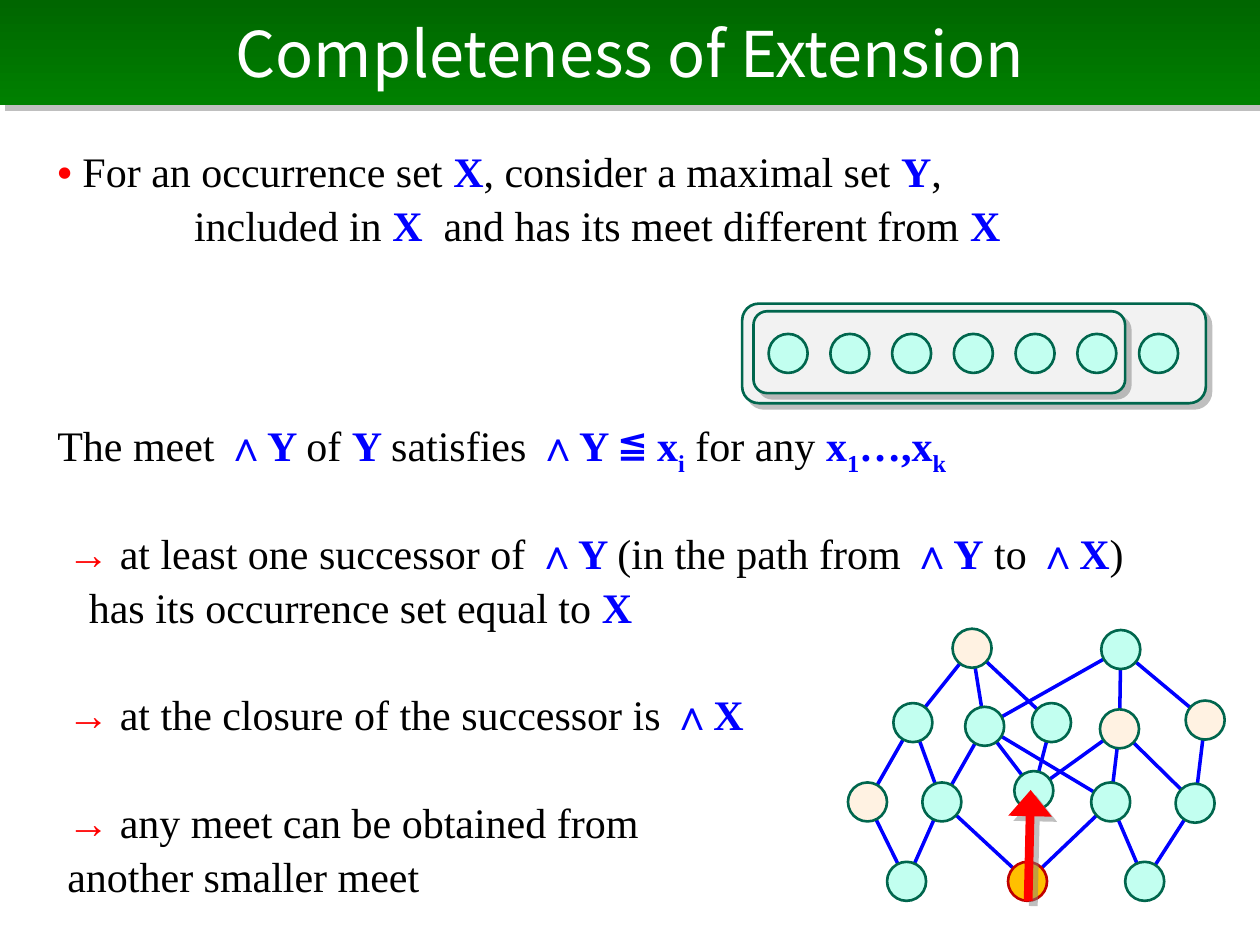
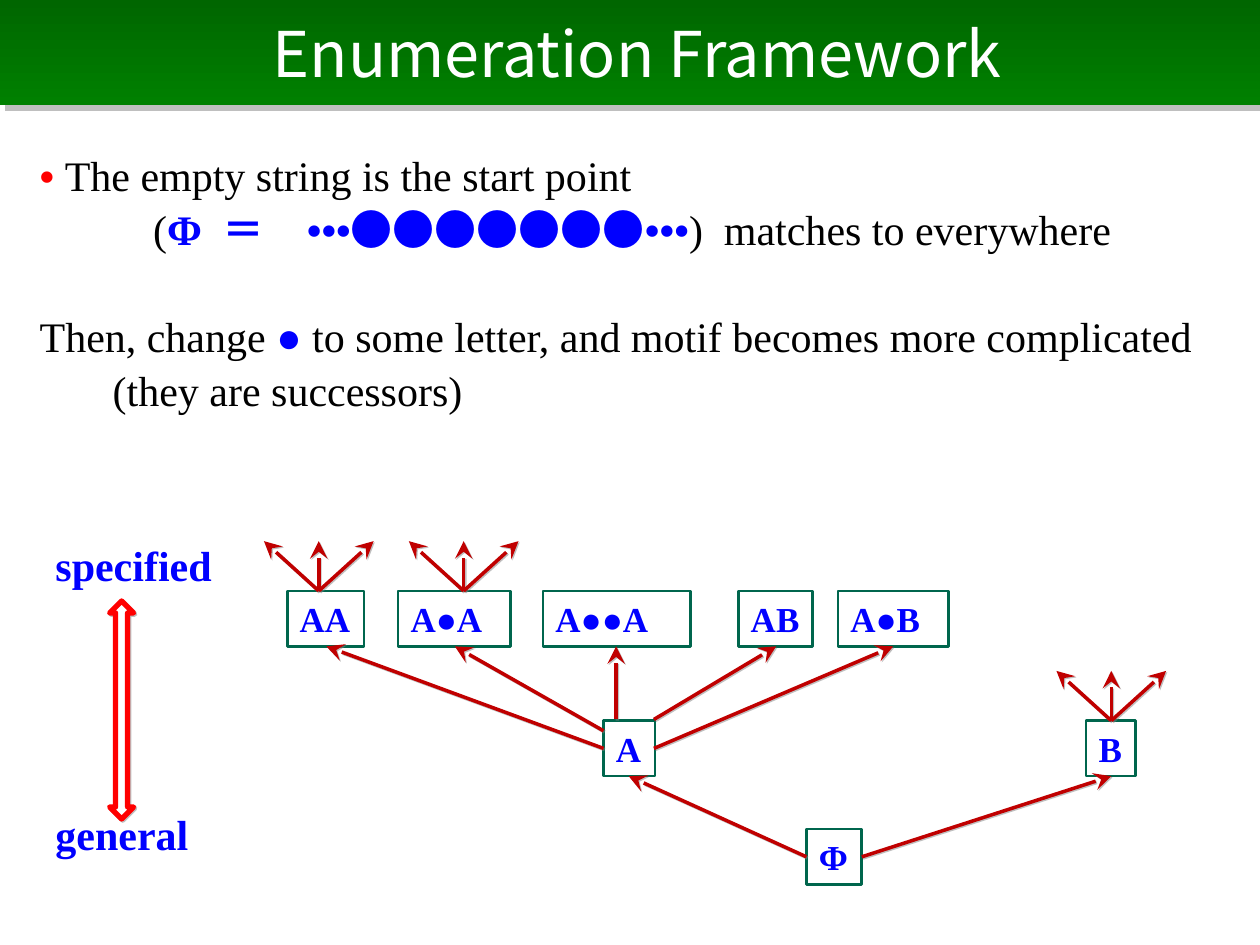
from math import hypot
from lxml.etree import SubElement
from pptx import Presentation
from pptx.dml.color import RGBColor
from pptx.enum.shapes import MSO_CONNECTOR, MSO_SHAPE
from pptx.enum.text import MSO_ANCHOR, PP_ALIGN
from pptx.oxml.ns import qn
from pptx.util import Inches, Pt

COLUMNS, ROWS = 100, 75
GREEN, MINT, PEACH, GREY = "00664D", "C2FFF0", "FFE4C3", "F2F2F2"
WHITE, BLACK, RED, BLUE, CRIMSON = "FFFFFF", "000000", "FF0000", "0000FF", "C00000"
SERIF, SANS = "Times New Roman", "Noto Sans CJK JP"


def color(code):
    return RGBColor.from_string(code)


def plain(text):
    return text, BLACK


def red(text):
    return text, RED, True


def blue(text, asian=SANS):
    return text, BLUE, True, 0, asian


def sub(text):
    return text, BLUE, True, -25000


class Page:
    pitch = 30.85
    dot = 3.1

    def __init__(self, deck, title):
        self.column = deck.slide_width / COLUMNS
        self.row = deck.slide_height / ROWS
        self.slide = deck.slides.add_slide(deck.slide_layouts[6])
        self.header(title)

    def place(self, left, top, width, height):
        return (round(left * self.column), round(top * self.row),
                round(width * self.column), round(height * self.row))

    def shadow(self, element, distance):
        effects = SubElement(element.spPr, qn("a:effectLst"))
        if distance:
            outer = SubElement(effects, qn("a:outerShdw"), dist=str(Pt(distance)),
                               dir="2700000", algn="ctr", rotWithShape="0")
            tone = SubElement(outer, qn("a:srgbClr"), val="808080")
            SubElement(tone, qn("a:alpha"), val="50000")

    def shape(self, kind, area, fill, line=GREEN, weight=1.5, shadow=0, opacity=100):
        box = self.slide.shapes.add_shape(kind, *self.place(*area))
        box.fill.solid()
        box.fill.fore_color.rgb = color(fill)
        if opacity < 100:
            tone = box._element.spPr.find(".//" + qn("a:srgbClr"))
            SubElement(tone, qn("a:alpha"), val=str(opacity * 1000))
        if line:
            box.line.color.rgb = color(line)
            box.line.width = Pt(weight)
        else:
            box.line.fill.background()
        self.shadow(box._element, shadow)
        return box

    def span(self, para, text, tone, bold=False, baseline=0, asian=SANS,
             size=24, font=SERIF):
        span = para.add_run()
        span.text = text
        span.font.size = Pt(size)
        span.font.bold = bold
        span.font.color.rgb = color(tone)
        span.font.name = font
        properties = span._r.get_or_add_rPr()
        SubElement(properties, qn("a:ea"), typeface=asian)
        if baseline:
            properties.set("baseline", str(baseline))

    def header(self, title):
        band = self.shape(MSO_SHAPE.RECTANGLE, (0, 0, COLUMNS, 8.35), "008000",
                          line=None, shadow=4.2)
        band.fill.gradient()
        band.fill.gradient_angle = 270
        for stop, tone in zip(band.fill.gradient_stops, ("006600", "008000")):
            stop.color.rgb = color(tone)
        band.text_frame.vertical_anchor = MSO_ANCHOR.MIDDLE
        para = band.text_frame.paragraphs[0]
        para.alignment = PP_ALIGN.CENTER
        self.span(para, title, WHITE, size=36, font=SANS)

    def text(self, area, lines):
        box = self.slide.shapes.add_textbox(*self.place(*area))
        frame = box.text_frame
        frame.word_wrap = True
        frame.margin_left = frame.margin_right = 0
        frame.margin_top = frame.margin_bottom = 0
        for number, (gap, indent, spans) in enumerate(lines):
            para = frame.add_paragraph() if number else frame.paragraphs[0]
            para.line_spacing = Pt(self.pitch)
            para.space_before = Pt(gap * self.pitch)
            properties = para._p.get_or_add_pPr()
            properties.set("marL", "0")
            properties.set("indent", str(round(indent * self.column)))
            for span in spans:
                self.span(para, *span)

    def line(self, start, end, tone, weight=2, head=None, length="lg", shadow=0):
        connector = self.slide.shapes.add_connector(
            MSO_CONNECTOR.STRAIGHT, *self.place(*start, *end))
        connector.line.color.rgb = color(tone)
        connector.line.width = Pt(weight)
        if head:
            SubElement(connector.line._get_or_add_ln(), qn("a:tailEnd"),
                       type=head, w="lg", len=length)
        self.shadow(connector._element, shadow)

    def circle(self, center, fill=MINT, line=GREEN, opacity=100):
        x, y = center
        area = (x - self.dot / 2, y - self.dot / 2, self.dot, self.dot)
        self.shape(MSO_SHAPE.OVAL, area, fill, line, opacity=opacity)

    def label(self, left, top, width, text):
        box = self.shape(MSO_SHAPE.RECTANGLE, (left, top, width, 4.4), WHITE)
        frame = box.text_frame
        frame.word_wrap = True
        frame.margin_right = 0
        frame.vertical_anchor = MSO_ANCHOR.MIDDLE
        para = frame.paragraphs[0]
        para.alignment = PP_ALIGN.LEFT
        self.span(para, text, BLUE, True, size=20)

    def branch(self, start, end):
        self.line(start, end, CRIMSON, head="stealth", shadow=1)

    def fan(self, x, y):
        for offset in (-4.35, 0, 4.35):
            self.branch((x, y), (x + offset, y - 3.95))


def toward(start, end, distance):
    across, down = end[0] - start[0], end[1] - start[1]
    share = distance / hypot(across, down)
    return start[0] + across * share, start[1] + down * share


def completeness(deck):
    page = Page(deck, "Completeness of Extension")
    for area in ((58.9, 24.1, 36.8, 7.9), (59.8, 24.7, 29.5, 6.5)):
        page.shape(MSO_SHAPE.ROUNDED_RECTANGLE, area, GREY, shadow=4.2)
    for number in range(7):
        page.circle((62.55 + 4.9 * number, 28.05))

    page.text((4.55, 11.3, 92, 62), [
        (0, 0, [red("• "), plain("For an occurrence set "), blue("X"),
                plain(", consider a maximal set "), blue("Y"), plain(",")]),
        (0, 10.85, [plain("included in "), blue("X "),
                    plain(" and has its meet different from "), blue("X")]),
        (3.2, 0, [plain("The meet "), blue("∧Y "), plain("of "), blue("Y "),
                  plain("satisfies "), blue("∧Y ≦ x"), sub("i"), plain(" for any "),
                  blue("x"), sub("1"), blue("…,x"), sub("k")]),
        (0.86, 0.8, [red("→ "), plain("at least one successor of "), blue("∧Y "),
                     plain("(in the path from "), blue("∧Y"), plain(" to "),
                     blue("∧X"), plain(")")]),
        (0, 2.5, [plain("has its occurrence set equal to "), blue("X")]),
        (1, 0.8, [red("→ "), plain("at the closure of the successor is "), blue("∧X")]),
        (1, 0.8, [red("→ "), plain("any meet can be obtained from")]),
        (0, 0.8, [plain("another smaller meet")]),
    ])

    nodes = {
        "a1": (77.15, 51.45), "a2": (88.95, 51.55),
        "b1": (72.45, 57.35), "b2": (78.15, 57.65), "b3": (83.45, 57.35),
        "b4": (88.85, 57.85), "b5": (95.65, 57.15),
        "c1": (68.85, 63.65), "c2": (74.75, 63.65), "c3": (82.05, 62.75),
        "c4": (88.15, 63.65), "c5": (94.85, 63.75),
        "d1": (71.95, 69.95), "d2": (81.55, 69.95), "d3": (90.85, 69.95),
    }
    below = {
        "a1": "b1 b2 b3", "a2": "b2 b4 b5", "b1": "c1 c2", "b2": "c2 c3 c4",
        "b3": "c3", "b4": "c3 c4 c5", "b5": "c5", "c1": "d1", "c2": "d1 d2",
        "c3": "d2", "c4": "d2 d3", "c5": "d3",
    }
    pale = ("a1", "b4", "b5", "c1")
    for upper, names in below.items():
        for lower in names.split():
            ends = [toward(nodes[here], nodes[there], page.dot / 2)
                    if here in pale else nodes[here]
                    for here, there in ((upper, lower), (lower, upper))]
            page.line(*ends, BLUE)
    for name, center in nodes.items():
        if name in pale:
            page.circle(center, PEACH, opacity=47)
        elif name == "d2":
            page.circle(center, "FFC000", CRIMSON)
        else:
            page.circle(center)
    page.line((81.6, 71.5), (81.8, 62.7), RED, 5, "triangle", "med", 4.2)


def enumeration(deck):
    page = Page(deck, " Enumeration Framework")
    dots = blue("•••", SERIF)
    page.text((3.15, 11.55, 96, 22), [
        (0, 0, [red("• "), plain("The empty string is the start point")]),
        (0, 9, [plain("("), blue("Φ "), blue(" ＝　"), dots, blue("●●●●●●●"), dots,
                plain(") "), plain(" matches to everywhere")]),
        (1, 0, [plain("Then, change "), blue("● "),
                plain("to some letter, and motif becomes more complicated")]),
        (0, 5.8, [plain("(they are successors)")]),
    ])

    for label in ((64, 65.8, 4.4, "Φ"), (47.9, 57.2, 4.1, "A"), (86.2, 57.2, 3.9, "B"),
                  (22.8, 46.9, 6.1, "AA"), (58.6, 46.9, 5.9, "AB"),
                  (31.6, 46.9, 8.9, "A●A"), (43.1, 46.9, 11.7, "A●●A"),
                  (66.5, 46.9, 8.8, "A●B")):
        page.label(*label)

    page.branch((64, 68), (49.9, 61.6))
    page.branch((68.4, 68), (88.2, 61.6))
    for start, x in (((47.9, 59.4), 25.9), ((47.9, 58), 36.1), ((48.9, 57.1), 48.9),
                     ((51.9, 57.1), 61.6), ((51.9, 59.4), 70.9)):
        page.branch(start, (x, 51.3))
    for tip in ((88.2, 57.2), (25.3, 46.9), (36.8, 46.9)):
        page.fan(*tip)

    page.text((4.4, 42.55, 25, 26),
              [(0, 0, [blue("specified")]), (3.98, 0, [blue("general")])])
    page.shape(MSO_SHAPE.UP_DOWN_ARROW, (8.7, 47.7, 1.9, 17.3), WHITE, RED, 3, 1)


def main():
    deck = Presentation()
    deck.slide_width, deck.slide_height = Inches(10), Inches(7.5)
    completeness(deck)
    enumeration(deck)
    deck.save("out.pptx")


if __name__ == "__main__":
    main()
